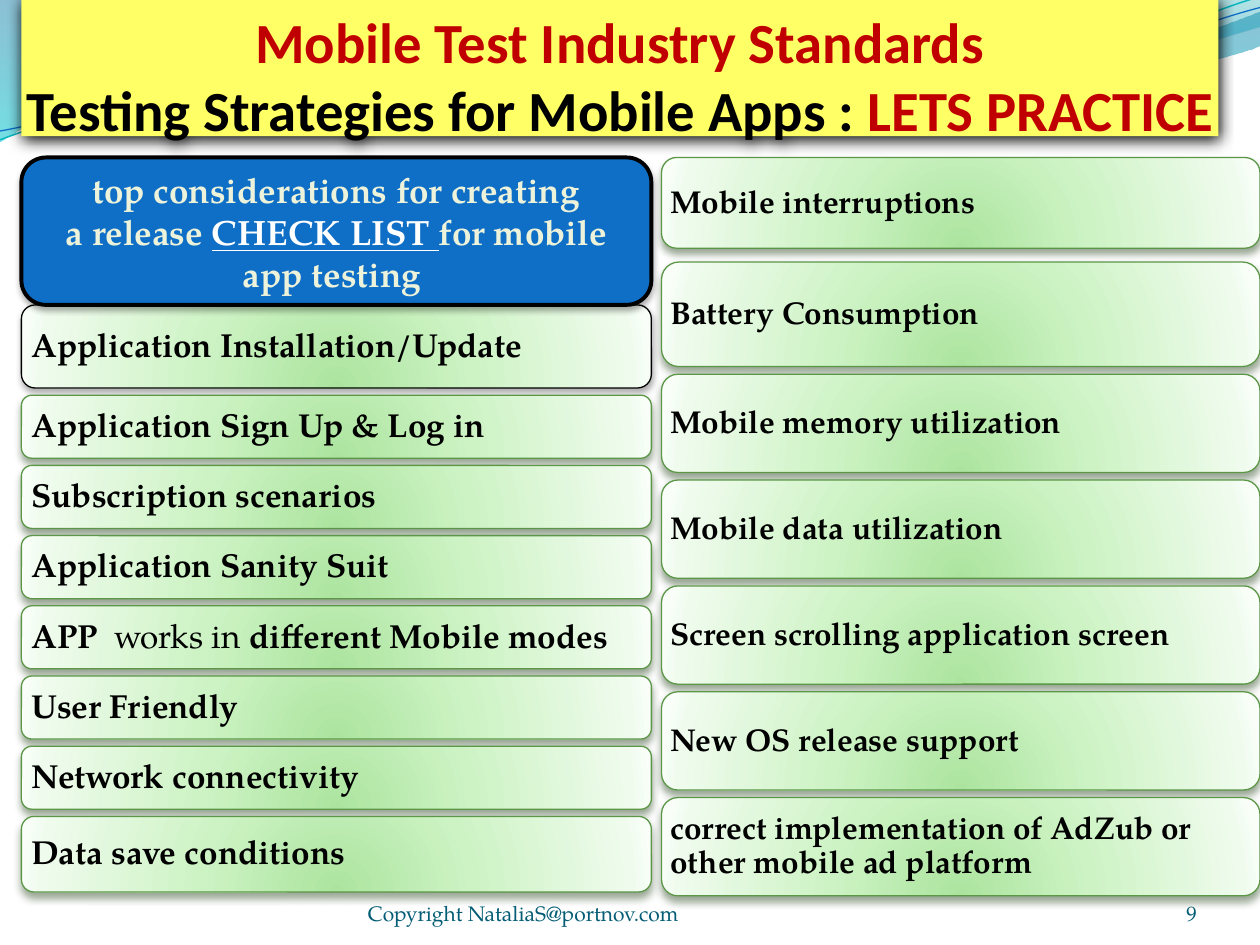
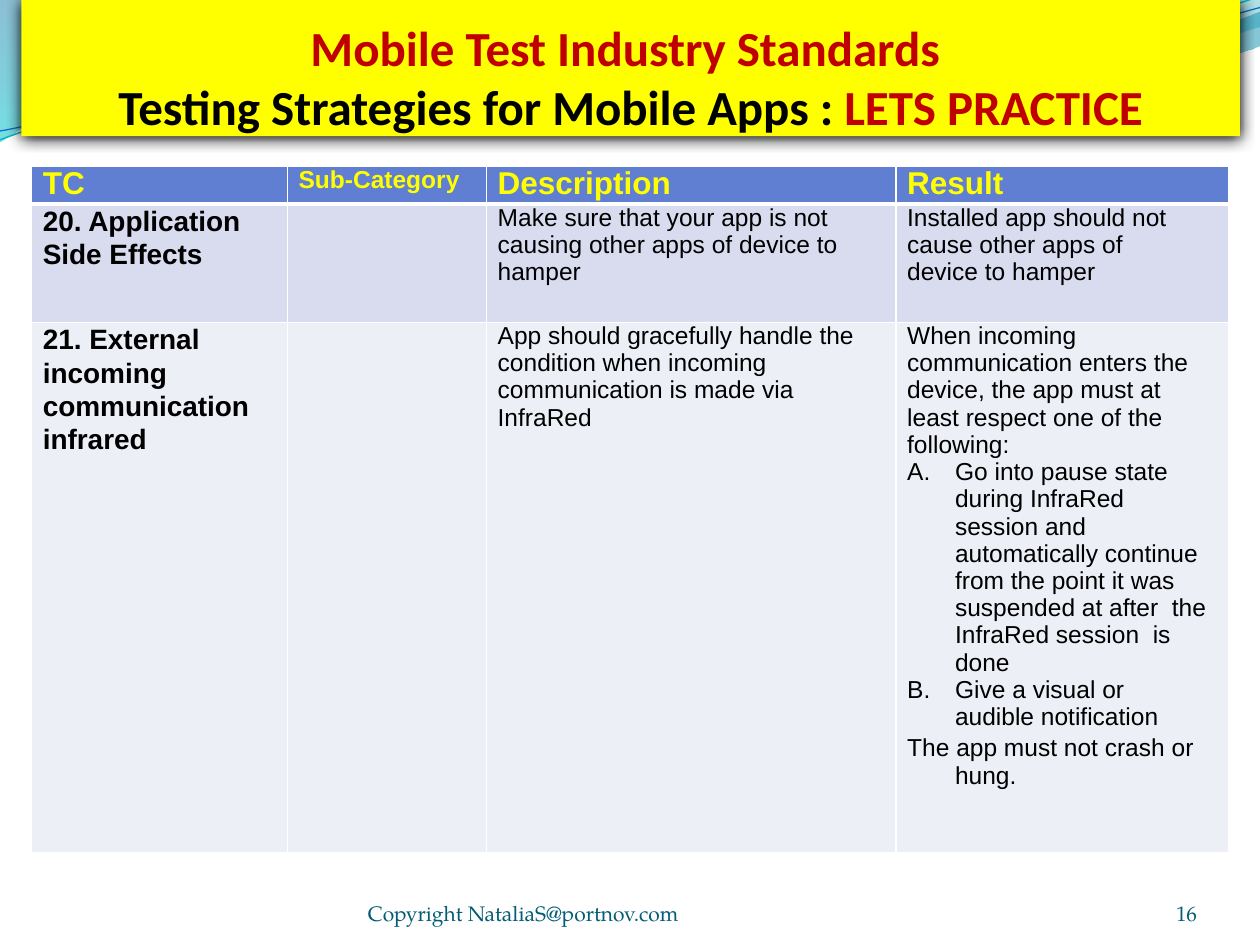
from dataclasses import dataclass

from lxml import etree
from pptx import Presentation
from pptx.dml.color import RGBColor
from pptx.enum import shapes, text
from pptx.oxml import ns
from pptx.util import Inches, Pt


@dataclass(frozen=True)
class Theme:
    red: str = "C00000"
    black: str = "000000"
    white: str = "FFFFFF"
    yellow: str = "FFFF00"
    pale_yellow: str = "FFFF66"
    blue: str = "0F6FC6"
    teal: str = "0AB8BF"
    cream: str = "EDF3DB"
    green: str = "5B9747"
    footer: str = "045D75"
    table_rows: tuple = ("607ED2", "D9DCEF", "EDEFF7")
    title_font: str = "Calibri"
    body_font: str = "TeX Gyre Pagella"
    table_font: str = "Arial"
    footer_size: float = 12
    heading_size: float = 20
    table_size: float = 14
    case_size: float = 16
    header_size: float = 18
    # shadows: colour, opacity %, blur pt, distance pt
    title_shadow: tuple = (black, 100, 8.5, 1)
    dark_shadow: tuple = (black, 32, 3.5, 2.2)
    card_shadow: tuple = ("2B4821", 48, 4.5, 3)


T = Theme()
A = 'xmlns:a="http://schemas.openxmlformats.org/drawingml/2006/main"'
DOWN = f'<a:lin {A} ang="5400000" scaled="0"/>'
GLOW = (f'<a:path {A} path="circle"><a:fillToRect l="50000" t="130000" '
        'r="50000" b="-30000"/></a:path>')
# gradients: (position %, colour, opacity %) stops and a direction
CARD_FILL = ([(0, "ACE49F", 100), (43, "CDF3C4", 100),
              (93, "EFFBED", 100), (100, "F9FFF8", 100)], GLOW)
WAVE_FILL = ([(0, "0074A1", 45), (100, "00C6CF", 55)], DOWN)
CREST_FILL = ([(0, "00A1A9", 30), (80, "008BBF", 45)], DOWN)


def style(sp, fill=None, line=None, shadow=None):
    """Apply a solid or gradient fill, a (colour, width) line and a shadow."""
    sp.shadow.inherit = False
    sp_pr = sp._element.spPr
    if fill is None:
        sp.fill.background()
    elif isinstance(fill, str):
        sp.fill.solid()
        sp.fill.fore_color.rgb = RGBColor.from_string(fill)
    else:
        stops, direction = fill
        sp.fill.gradient()
        grad = sp_pr.find(ns.qn("a:gradFill"))
        grad.clear()
        gs = "".join(f'<a:gs pos="{pos * 1000}"><a:srgbClr val="{color}">'
                     f'<a:alpha val="{alpha * 1000}"/></a:srgbClr></a:gs>'
                     for pos, color, alpha in stops)
        grad.append(etree.fromstring(f"<a:gsLst {A}>{gs}</a:gsLst>"))
        grad.append(etree.fromstring(direction))
    if line:
        sp.line.color.rgb = RGBColor.from_string(line[0])
        sp.line.width = Pt(line[1])
    else:
        sp.line.fill.background()
    if shadow:
        color, alpha, blur, dist = shadow
        sp_pr.find(ns.qn("a:effectLst")).append(etree.fromstring(
            f'<a:outerShdw {A} blurRad="{Pt(blur)}" dist="{Pt(dist)}" dir="5400000" '
            f'rotWithShape="0"><a:srgbClr val="{color}">'
            f'<a:alpha val="{alpha * 1000}"/></a:srgbClr></a:outerShdw>'))


def add_run(p, words, font, size, color, bold=False, underline=False):
    r = p.add_run()
    r.text = words
    r.font.name, r.font.size = font, Pt(size)
    r.font.bold, r.font.underline = bold, underline
    r.font.color.rgb = RGBColor.from_string(color)


prs = Presentation()
prs.slide_width, prs.slide_height = Inches(10), Inches(7.5)
layout = prs.slide_layouts[5]

# Page number, title fill, title width, title size, space above, first line
pages = [(9, T.pale_yellow, 9.5, 32.4, 0.05, " Mobile Test Industry Standards "),
         (16, T.yellow, 9.67, 28, 0.14, "Mobile Test Industry Standards ")]
slides = []
for number, band, width, size, above, first_line in pages:
    s = prs.slides.add_slide(layout)
    slides.append(s)
    title = s.shapes.title
    title.left, title.top = Inches(0.17), Inches(0)
    title.width, title.height = Inches(width), Inches(1.08)
    style(title, band, shadow=T.title_shadow)
    tf = title.text_frame
    tf.auto_size = text.MSO_AUTO_SIZE.NONE
    tf.word_wrap = True
    tf.vertical_anchor = text.MSO_ANCHOR.TOP
    tf.margin_left = tf.margin_right = tf.margin_bottom = 0
    tf.margin_top = Inches(above)
    p = tf.paragraphs[0]
    p.alignment = text.PP_ALIGN.CENTER
    add_run(p, first_line, T.title_font, size, T.red, True)
    p.add_line_break()
    add_run(p, "Testing Strategies for Mobile Apps : ", T.title_font, size, T.black, True)
    add_run(p, "LETS PRACTICE", T.title_font, size, T.red, True)

    for left, width, words, align in [
            (2.92, 3.67, "Copyright NataliaS@portnov.com", text.PP_ALIGN.LEFT),
            (8.67, 0.83, str(number), text.PP_ALIGN.RIGHT)]:
        box = s.shapes.add_textbox(Inches(left), Inches(6.95), Inches(width), Inches(0.4))
        tf = box.text_frame
        tf.word_wrap = True
        tf.vertical_anchor = text.MSO_ANCHOR.BOTTOM
        tf.margin_left = tf.margin_right = tf.margin_top = tf.margin_bottom = 0
        tf.paragraphs[0].alignment = align
        add_run(tf.paragraphs[0], words, T.body_font, T.footer_size, T.footer)

# Waves behind the title, kept on the layout; six numbers are a Bézier curve
waves = [
    (WAVE_FILL, None, [
        (0, 0), (4.4, -0.01), (4.76, 0.17, 6.64, 0.63, 7.58, 0.63),
        (8.53, 0.63, 9.58, 0.26, 10, 0.09), (10.01, 0.36),
        (9.83, 0.44, 8.7, 0.76, 7.46, 0.75), (6.22, 0.75, 3.82, 0.28, 2.57, 0.34),
        (1.29, 0.36, 0.46, 0.83, -0.01, 1.13), (0, 0)]),
    (CREST_FILL, None, [
        (4.79, -0.01), (5.09, 0.11, 6.82, 0.62, 7.69, 0.65),
        (8.56, 0.69, 9.61, 0.32, 10, 0.21), (10, 0), (4.79, -0.01)]),
    (None, (T.teal, 0.85), [
        (0, 1.11), (0.48, 0.93, 1.58, 0.57, 2.77, 0.52),
        (3.95, 0.47, 5.93, 0.89, 7.13, 0.8), (8.33, 0.71, 9.38, 0.15, 9.98, -0.02)]),
    (None, (T.blue, 0.75), [
        (0, 1.04), (0.47, 0.96, 1.64, 0.61, 2.83, 0.56),
        (4.03, 0.51, 5.97, 0.84, 7.17, 0.75), (8.36, 0.67, 9.41, 0.21, 10, 0.06)]),
]
for i, (fill, line, route) in enumerate(waves):
    points = [(Inches(leg[k]), Inches(leg[k + 1]))
              for leg in route for k in range(0, len(leg), 2)]
    builder = slides[0].shapes.build_freeform(*points[0])
    builder.add_line_segments(points[1:], close=fill is not None)
    wave = builder.convert_to_shape()
    wave.name = f"Wave {i + 1}"
    style(wave, fill, line)
    # Join each three points of a curve into one cubic segment
    segments = iter(list(wave._element.iter(ns.qn("a:lnTo"))))
    for leg in route[1:]:
        segment = next(segments)
        if len(leg) == 6:
            curve = etree.fromstring(f"<a:cubicBezTo {A}/>")
            segment.addprevious(curve)
            for part in (segment, next(segments), next(segments)):
                curve.append(part[0])
                part.getparent().remove(part)
    wave._element.nvSpPr.cNvPr.set("id", str(100 + i))
    layout.shapes._spTree.insert(2 + i, wave._element)

# Check list: left, top, bottom, width, type size, inset, (height, text) rows
s = slides[0]
stacks = [
    (0.17, 2.42, 7.08, 5, 19, 0.08, [
        (0.66, "Application Installation/Update"),
        (0.5, "Application Sign Up &\u00a0Log in"),
        (0.5, "Subscription scenarios"),
        (0.5, "Application Sanity Suit"),
        (0.5, "APP|  works in\u00a0|different Mobile modes"),
        (0.5, "User Friendly"),
        (0.5, "Network connectivity"),
        (0.6, "Data save conditions")]),
    (5.25, 1.25, 1.97, 4.75, 18, 0.07, [(0.72, "Mobile interruptions")]),
    (5.25, 2.08, 7.11, 4.75, 18, 0.07, [
        (0.83, "Battery Consumption"),
        (0.78, "Mobile memory utilization"),
        (0.78, "Mobile data utilization"),
        (0.78, "Screen scrolling application screen"),
        (0.78, "New OS release support"),
        (0.78, "correct implementation of AdZub or other mobile ad platform")]),
]
for left, top, bottom, width, size, inset, rows in stacks:
    spare = bottom - top - sum(height for height, words in rows)
    gap = spare / max(len(rows) - 1, 1)
    for height, words in rows:
        card = s.shapes.add_shape(shapes.MSO_SHAPE.ROUNDED_RECTANGLE, Inches(left),
                                  Inches(top), Inches(width), Inches(height))
        first = words == "Application Installation/Update"
        style(card, CARD_FILL, (T.black if first else T.green, 0.75),
              T.dark_shadow if first else T.card_shadow)
        tf = card.text_frame
        tf.word_wrap = True
        tf.vertical_anchor = text.MSO_ANCHOR.MIDDLE
        # rounded corners already push the text in by about 5% of the height
        tf.margin_left = tf.margin_right = Inches(inset - 0.05 * height)
        tf.margin_top = tf.margin_bottom = 0
        p = tf.paragraphs[0]
        p.alignment = text.PP_ALIGN.LEFT
        p.line_spacing = 0.9
        for i, part in enumerate(words.split("|")):
            add_run(p, part, T.body_font, size, T.black, bold=i % 2 == 0)
        top += height + gap

heading = s.shapes.add_shape(shapes.MSO_SHAPE.ROUNDED_RECTANGLE, Inches(0.17),
                             Inches(1.25), Inches(5), Inches(1.17))
style(heading, T.blue, (T.black, 2.25), T.dark_shadow)
tf = heading.text_frame
tf.word_wrap = True
tf.vertical_anchor = text.MSO_ANCHOR.MIDDLE
p = tf.paragraphs[0]
p.alignment = text.PP_ALIGN.CENTER
for words, color, underline in [
        ("top considerations for creating a\u00a0release ", T.cream, False),
        ("CHECK LIST ", T.white, True),
        ("for mobile app testing ", T.cream, False)]:
    add_run(p, words, T.body_font, T.heading_size, color, True, underline)

# Test cases: each cell is a list of paragraphs
s = slides[1]
cases = [
    [["TC"], ["Sub-Category"], ["Description"], ["Result"]],
    [["20. Application Side Effects"], [],
     ["Make sure that your app is not causing other apps of device to hamper"],
     ["Installed app should not cause other apps of device to hamper"]],
    [["21. External incoming communication infrared"], [],
     ["App should gracefully handle the condition when incoming communication "
      "is made via InfraRed"],
     ["When incoming communication enters the device, the app must at least "
      "respect one of the following:",
      "Go into pause state during InfraRed session and automatically continue from "
      "the point it was suspended at after  the InfraRed session  is done",
      "Give a visual or audible notification",
      "The app must not crash or hung."]],
]
table = s.shapes.add_table(3, 4, Inches(0.25), Inches(1.32), Inches(9.5), Inches(5.43)).table
for column, width in zip(table.columns, (2.03, 1.58, 3.25, 2.64)):
    column.width = Inches(width)
for row, height in zip(table.rows, (0.28, 0.94, 4.21)):
    row.height = Inches(height)
for i, row in enumerate(cases):
    for j, paragraphs in enumerate(row):
        cell = table.cell(i, j)
        tc_pr = cell._tc.get_or_add_tcPr()
        for side in "LRTB":
            heavy = (i, side) in ((0, "B"), (1, "T"))
            tc_pr.append(etree.fromstring(
                f'<a:ln{side} {A} w="{Pt(3 if heavy else 1)}"><a:solidFill>'
                f'<a:srgbClr val="{T.white}"/></a:solidFill></a:ln{side}>'))
        cell.fill.solid()
        cell.fill.fore_color.rgb = RGBColor.from_string(T.table_rows[i])
        cell.margin_left = cell.margin_top = cell.margin_bottom = 0
        cell.margin_right = Inches(0.3 if i == 1 else 0.16)
        tf = cell.text_frame
        for k, words in enumerate(paragraphs):
            p = tf.add_paragraph() if k else tf.paragraphs[0]
            p_pr = p._p.get_or_add_pPr()
            p_pr.set("marL", str(Inches(0.47 if k else 0.09)))
            p_pr.set("indent", str(Inches(-0.38 if k else 0)))
            if k in (1, 2):
                p_pr.append(etree.fromstring(f'<a:buAutoNum {A} type="alphaUcPeriod"/>'))
            if k == 3:
                p.space_before = Pt(1.4)
            size = T.table_size
            if i and j == 0:
                size = T.case_size
                p.line_spacing = Pt(19)
            elif i:
                p.line_spacing = Pt(16) if k == 3 else 0.99
            elif j != 1:
                size = T.header_size
            add_run(p, words, T.table_font, size, T.black if i else T.yellow,
                    bold=i == 0 or j == 0)

prs.save("out.pptx")
